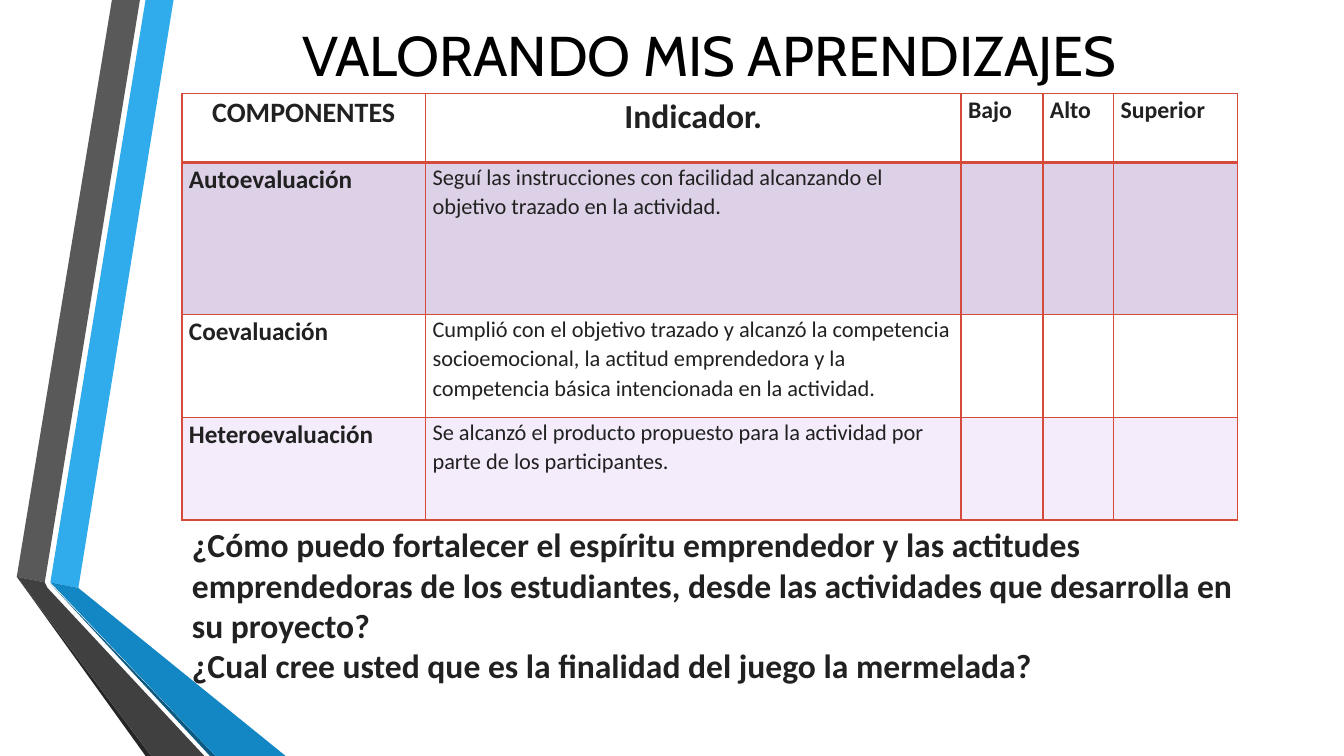
from dataclasses import dataclass

from lxml import etree
from pptx import Presentation
from pptx.dml.color import RGBColor
from pptx.enum.text import MSO_ANCHOR, MSO_AUTO_SIZE, PP_ALIGN
from pptx.oxml.ns import qn
from pptx.util import Pt

CENTER, LEFT = PP_ALIGN.CENTER, PP_ALIGN.LEFT
BOTTOM = MSO_ANCHOR.BOTTOM
FIT_SHAPE, NO_FIT = MSO_AUTO_SIZE.SHAPE_TO_FIT_TEXT, MSO_AUTO_SIZE.NONE


@dataclass(frozen=True)
class Theme:
    title_font: str = "Cabin"
    body_font: str = "Calibri"
    black: str = "000000"
    ink: str = "212121"
    border: str = "D64A3B"
    violet: str = "541B89"
    lilac: str = "CAA3ED"
    tint_percent: int = 20
    title_size: int = 40
    question_size: int = 24
    component_size: int = 18
    indicator_size: int = 16


THEME = Theme()

RIBBON_FACETS = [
    ("30ACEC", [(36, 416), (55.5, 420), (124.5, 0), (104.5, 0)]),
    ("595959", [(100, 0), (80, 0), (11.5, 412.5), (31.5, 415.5)]),
    ("262626", [(11.5, 412.5), (104.5, 540), (108.5, 540)]),
    ("0C5A82", [(36, 417), (150, 540), (154, 540)]),
    ("1287C3", [(36, 416), (154, 540), (204, 540), (55.5, 420)]),
    ("404040", [(31.5, 415.5), (11.5, 412.5), (108.5, 540), (145.5, 540), (34.5, 420)]),
]

COLUMN_WIDTHS = [174, 382.5, 58.5, 50.5, 88.5]
ROW_HEIGHTS = [49, 108.5, 73.5, 73.5]
HEADERS = [
    ("COMPONENTES", 20, CENTER),
    ("Indicador.", 24, CENTER),
    ("Bajo", 17, LEFT),
    ("Alto", 17, LEFT),
    ("Superior", 17, LEFT),
]
EVALUATIONS = [
    ("Autoevaluación",
     "Seguí las instrucciones con facilidad alcanzando el objetivo trazado en la actividad.",
     THEME.violet),
    ("Coevaluación",
     "Cumplió con el objetivo trazado y alcanzó la competencia socioemocional, "
     "la actitud emprendedora y la competencia básica intencionada en la actividad.",
     None),
    ("Heteroevaluación",
     "Se alcanzó el producto propuesto para la actividad por parte de los participantes.",
     THEME.lilac),
]
QUESTIONS = [
    "¿Cómo puedo fortalecer el espíritu emprendedor y las actitudes emprendedoras "
    "de los estudiantes, desde las actividades que desarrolla en su proyecto?",
    "¿Cual cree usted que es la finalidad del juego la mermelada?",
]


def style_paragraph(paragraph, size, bold, font=THEME.body_font, color=THEME.ink):
    for run in paragraph.runs:
        run.font.name = font
        run.font.size = Pt(size)
        run.font.bold = bold
        run.font.color.rgb = RGBColor.from_string(color)


def add_ribbon(slide, left, top):
    for color, corners in RIBBON_FACETS:
        points = [(left + x, top + y) for x, y in corners]
        builder = slide.shapes.build_freeform(*points[0], scale=Pt(1))
        builder.add_line_segments(points[1:], close=True)
        facet = builder.convert_to_shape()
        facet.shadow.inherit = False
        facet.fill.solid()
        facet.fill.fore_color.rgb = RGBColor.from_string(color)
        facet.line.fill.background()


def set_title(slide, left, top, width, height):
    title = slide.shapes.title
    title.left, title.top, title.width, title.height = map(Pt, (left, top, width, height))
    frame = title.text_frame
    frame.text = "VALORANDO MIS APRENDIZAJES"
    frame.word_wrap = True
    frame.auto_size = NO_FIT
    frame.vertical_anchor = BOTTOM
    heading = frame.paragraphs[0]
    heading.alignment = CENTER
    heading.line_spacing = 0.9
    style_paragraph(heading, THEME.title_size, False, THEME.title_font, THEME.black)


def set_borders(cell, top_width, bottom_width):
    properties = cell._tc.get_or_add_tcPr()
    for side, width in (("L", 1), ("R", 1), ("T", top_width), ("B", bottom_width)):
        line = etree.SubElement(properties, qn(f"a:ln{side}"), w=str(Pt(width)))
        fill = etree.SubElement(line, qn("a:solidFill"))
        etree.SubElement(fill, qn("a:srgbClr"), val=THEME.border)


def set_tint(cell, color):
    """Fill the cell with a translucent colour, or leave it clear."""
    if color is None:
        cell.fill.background()
        return
    cell.fill.solid()
    cell.fill.fore_color.rgb = RGBColor.from_string(color)
    swatch = cell._tc.tcPr.find(f"{qn('a:solidFill')}/{qn('a:srgbClr')}")
    etree.SubElement(swatch, qn("a:alpha"), val=str(THEME.tint_percent * 1000))


def write_cell(cell, text, size, bold, alignment=LEFT):
    cell.text_frame.text = text
    paragraph = cell.text_frame.paragraphs[0]
    paragraph.alignment = alignment
    paragraph.line_spacing = 1.07
    style_paragraph(paragraph, size, bold)


def add_rubric(slide, left, top):
    rubric = slide.shapes.add_table(
        len(ROW_HEIGHTS), len(COLUMN_WIDTHS), Pt(left), Pt(top),
        Pt(sum(COLUMN_WIDTHS)), Pt(sum(ROW_HEIGHTS))).table
    rubric.first_row = rubric.horz_banding = False
    for column, width in zip(rubric.columns, COLUMN_WIDTHS):
        column.width = Pt(width)

    tints = [None] + [tint for _, _, tint in EVALUATIONS]
    for index, (row, height, tint) in enumerate(zip(rubric.rows, ROW_HEIGHTS, tints)):
        row.height = Pt(height)
        for cell in row.cells:
            cell.margin_left = cell.margin_right = Pt(5)
            cell.margin_top = cell.margin_bottom = 0
            set_borders(cell, 2 if index == 1 else 1, 2 if index == 0 else 1)
            set_tint(cell, tint)

    for column, (label, size, alignment) in enumerate(HEADERS):
        write_cell(rubric.cell(0, column), label, size, True, alignment)
    for row, (component, indicator, _) in enumerate(EVALUATIONS, start=1):
        write_cell(rubric.cell(row, 0), component, THEME.component_size, True)
        write_cell(rubric.cell(row, 1), indicator, THEME.indicator_size, False)


def add_questions(slide, left, top, width, height):
    frame = slide.shapes.add_textbox(*map(Pt, (left, top, width, height))).text_frame
    frame.word_wrap = True
    frame.auto_size = FIT_SHAPE
    frame.text = "\n".join(QUESTIONS)
    for question in frame.paragraphs:
        style_paragraph(question, THEME.question_size, True)


def main():
    deck = Presentation()
    deck.slide_width, deck.slide_height = Pt(960), Pt(540)
    slide = deck.slides.add_slide(deck.slide_layouts.get_by_name("Title Only"))
    add_ribbon(slide, 0, 0)
    set_title(slide, 171.5, 0, 670.5, 67)
    add_rubric(slide, 130, 67)
    add_questions(slide, 130, 371, 766, 145.5)
    deck.save("out.pptx")


if __name__ == "__main__":
    main()
